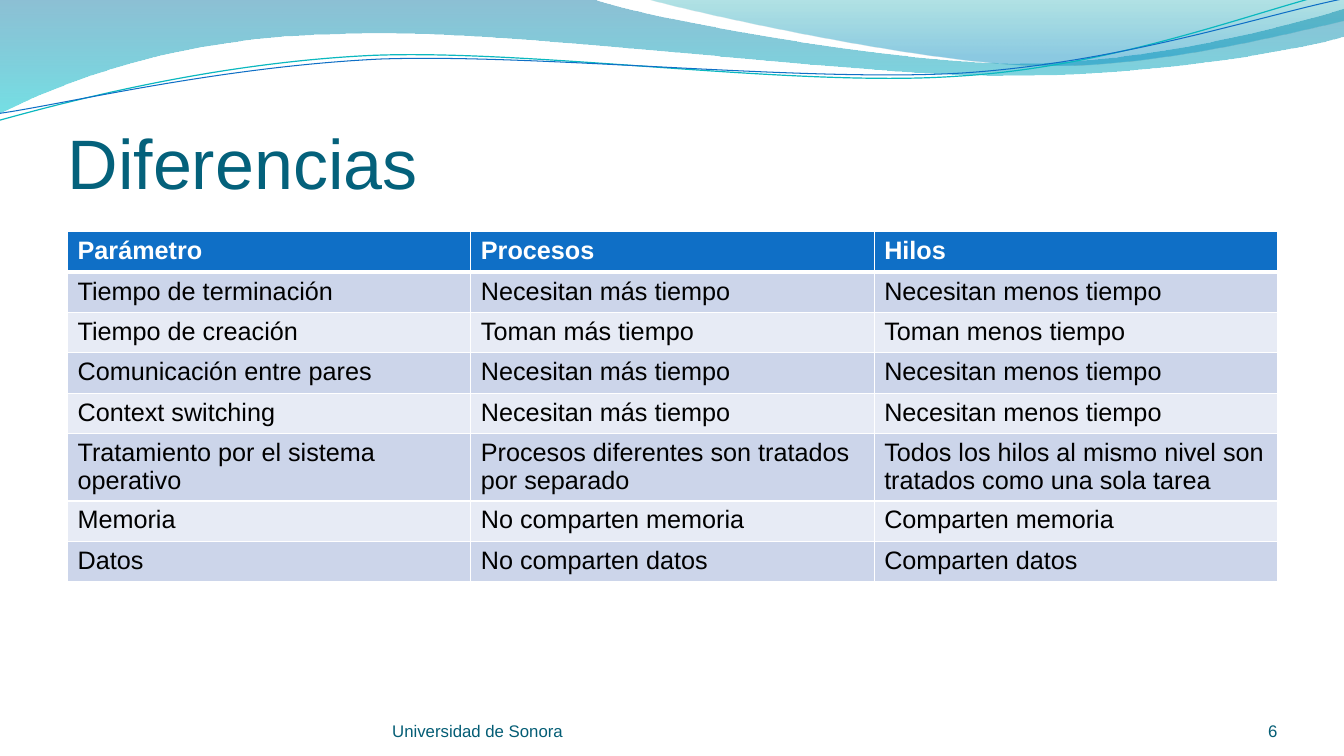
from lxml.etree import Element, SubElement
from pptx import Presentation
from pptx.dml.color import RGBColor
from pptx.enum.text import MSO_ANCHOR, MSO_AUTO_SIZE, PP_ALIGN
from pptx.oxml.ns import qn
from pptx.util import Inches, Pt

WHITE = RGBColor(0xFF, 0xFF, 0xFF)
BLACK = RGBColor(0x00, 0x00, 0x00)
TITLE_TEAL = RGBColor(0x04, 0x61, 0x7B)
FOOTER_TEAL = RGBColor(0x04, 0x5D, 0x75)
BLUE = RGBColor(0x0F, 0x6F, 0xC6)
AQUA = RGBColor(0x0A, 0xB8, 0xBF)
DEEP_BLUE = RGBColor(0x00, 0x74, 0xA1)
CYAN = RGBColor(0x00, 0xC6, 0xCF)
SEA_GREEN = RGBColor(0x00, 0xA1, 0xA9)
SKY_BLUE = RGBColor(0x00, 0x8B, 0xBF)
BAND_DARK = RGBColor(0xCC, 0xD5, 0xEA)
BAND_LIGHT = RGBColor(0xE7, 0xEB, 0xF5)

prs = Presentation()
prs.slide_width = Inches(13.33)
prs.slide_height = Inches(7.5)
slide = prs.slides.add_slide(prs.slide_layouts[5])


def draw_wave(start, segments, closed):
    points = [(Inches(x), Inches(y)) for x, y in [start, *sum(segments, [])]]
    builder = slide.shapes.build_freeform(*points[0])
    builder.add_line_segments(points[1:], close=closed)
    wave = builder.convert_to_shape()
    wave.shadow.inherit = False
    vertices = iter(list(wave._element.iter(qn("a:lnTo"))))
    for segment in segments:
        group = [next(vertices) for _ in segment]
        if len(group) == 3:
            curve = Element(qn("a:cubicBezTo"))
            group[0].addprevious(curve)
            for vertex in group:
                curve.append(vertex[0])
                vertex.getparent().remove(vertex)
    return wave


def write(frame, text, size, color, bold=False, align=PP_ALIGN.LEFT):
    frame.text = text
    paragraph = frame.paragraphs[0]
    paragraph.alignment = align
    font = paragraph.runs[0].font
    for name, value in {"name": "Arial", "size": Pt(size), "bold": bold}.items():
        setattr(font, name, value)
    font.color.rgb = color


bands = [
    ((0, 0), [
        [(5.87, -0.01)],
        [(6.34, 0.17), (8.85, 0.63), (10.11, 0.63)],
        [(11.38, 0.63), (12.78, 0.26), (13.33, 0.09)],
        [(13.35, 0.36)],
        [(13.11, 0.44), (11.6, 0.76), (9.94, 0.75)],
        [(8.29, 0.75), (5.09, 0.28), (3.43, 0.34)],
        [(1.72, 0.36), (0.61, 0.83), (-0.01, 1.13)],
    ], [(0, DEEP_BLUE, 45), (1, CYAN, 55)]),
    ((6.39, -0.01), [
        [(6.79, 0.11), (9.09, 0.62), (10.25, 0.65)],
        [(11.41, 0.69), (12.82, 0.32), (13.33, 0.21)],
        [(13.33, 0)],
    ], [(0, SEA_GREEN, 30), (0.8, SKY_BLUE, 45)]),
]
for start, segments, stops in bands:
    band = draw_wave(start, segments, True)
    band.line.fill.background()
    band.fill.gradient()
    band.fill.gradient_angle = 270
    for stop, (position, color, opacity) in zip(band.fill.gradient_stops, stops):
        stop.position = position
        stop.color.rgb = color
    gradient = band._element.spPr.find(qn("a:gradFill"))
    for tone, (position, color, opacity) in zip(gradient.iter(qn("a:srgbClr")), stops):
        SubElement(tone, qn("a:alpha")).set("val", str(opacity * 1000))

strands = [
    ((-0.03, 0.88), [
        [(0.63, 0.73), (2.11, 0.41), (3.69, 0.41)],
        [(5.28, 0.42), (7.88, 0.93), (9.49, 0.89)],
        [(11.09, 0.87), (12.54, 0.36), (13.33, 0.22)],
    ], AQUA, 0.85),
    ((-0.02, 0.81), [
        [(0.62, 0.75), (2.18, 0.45), (3.78, 0.45)],
        [(5.37, 0.47), (7.95, 0.88), (9.54, 0.86)],
        [(11.14, 0.83), (12.56, 0.42), (13.36, 0.3)],
    ], BLUE, 0.75),
]
for start, segments, color, width in strands:
    strand = draw_wave(start, segments, False)
    strand.rotation = 357.3
    strand.fill.background()
    strand.line.color.rgb = color
    strand.line.width = Pt(width)

heading = slide.shapes.title
heading_box = {"left": 0.67, "top": 0.77, "width": 12, "height": 1.25}
for name, value in heading_box.items():
    setattr(heading, name, Inches(value))
heading_format = {
    "margin_left": 0, "margin_top": Inches(0.05), "margin_right": 0,
    "margin_bottom": 0, "vertical_anchor": MSO_ANCHOR.BOTTOM,
    "auto_size": MSO_AUTO_SIZE.NONE,
}
for name, value in heading_format.items():
    setattr(heading.text_frame, name, value)
write(heading.text_frame, "Diferencias", 50, TITLE_TEAL)

differences = [
    ("Parámetro", "Procesos", "Hilos"),
    ("Tiempo de terminación", "Necesitan más tiempo", "Necesitan menos tiempo"),
    ("Tiempo de creación", "Toman más tiempo", "Toman menos tiempo"),
    ("Comunicación entre pares", "Necesitan más tiempo", "Necesitan menos tiempo"),
    ("Context switching", "Necesitan más tiempo", "Necesitan menos tiempo"),
    ("Tratamiento por el sistema operativo",
     "Procesos diferentes son tratados por separado",
     "Todos los hilos al mismo nivel son tratados como una sola tarea"),
    ("Memoria", "No comparten memoria", "Comparten memoria"),
    ("Datos", "No comparten datos", "Comparten datos"),
]
comparison = slide.shapes.add_table(
    len(differences), 3, Inches(0.67), Inches(2.3), Inches(12), Inches(3.54)
).table
for row, entries in enumerate(differences):
    is_header = row == 0
    comparison.rows[row].height = Inches(0.67 if row == 5 else 0.4)
    for column, entry in enumerate(entries):
        cell = comparison.cell(row, column)
        cell.fill.solid()
        cell.fill.fore_color.rgb = (
            BLUE if is_header else BAND_DARK if row % 2 else BAND_LIGHT
        )
        write(cell.text_frame, entry, 18, WHITE if is_header else BLACK, is_header)
        if is_header:
            rule = Element(qn("a:lnB"), w=str(Pt(3)))
            rule_fill = SubElement(rule, qn("a:solidFill"))
            SubElement(rule_fill, qn("a:srgbClr"), val=str(WHITE))
            cell._tc.tcPr.insert(0, rule)

footers = [
    ("Universidad de Sonora", 3.89, 4.89, PP_ALIGN.LEFT),
    ("6", 11.56, 1.11, PP_ALIGN.RIGHT),
]
footer_format = {
    "margin_left": 0, "margin_top": 0, "margin_right": 0, "margin_bottom": 0,
    "vertical_anchor": MSO_ANCHOR.BOTTOM, "word_wrap": True,
}
for text, left, width, align in footers:
    footer = slide.shapes.add_textbox(
        Inches(left), Inches(6.95), Inches(width), Inches(0.4)
    ).text_frame
    for name, value in footer_format.items():
        setattr(footer, name, value)
    write(footer, text, 12, FOOTER_TEAL, align=align)

prs.save("out.pptx")
